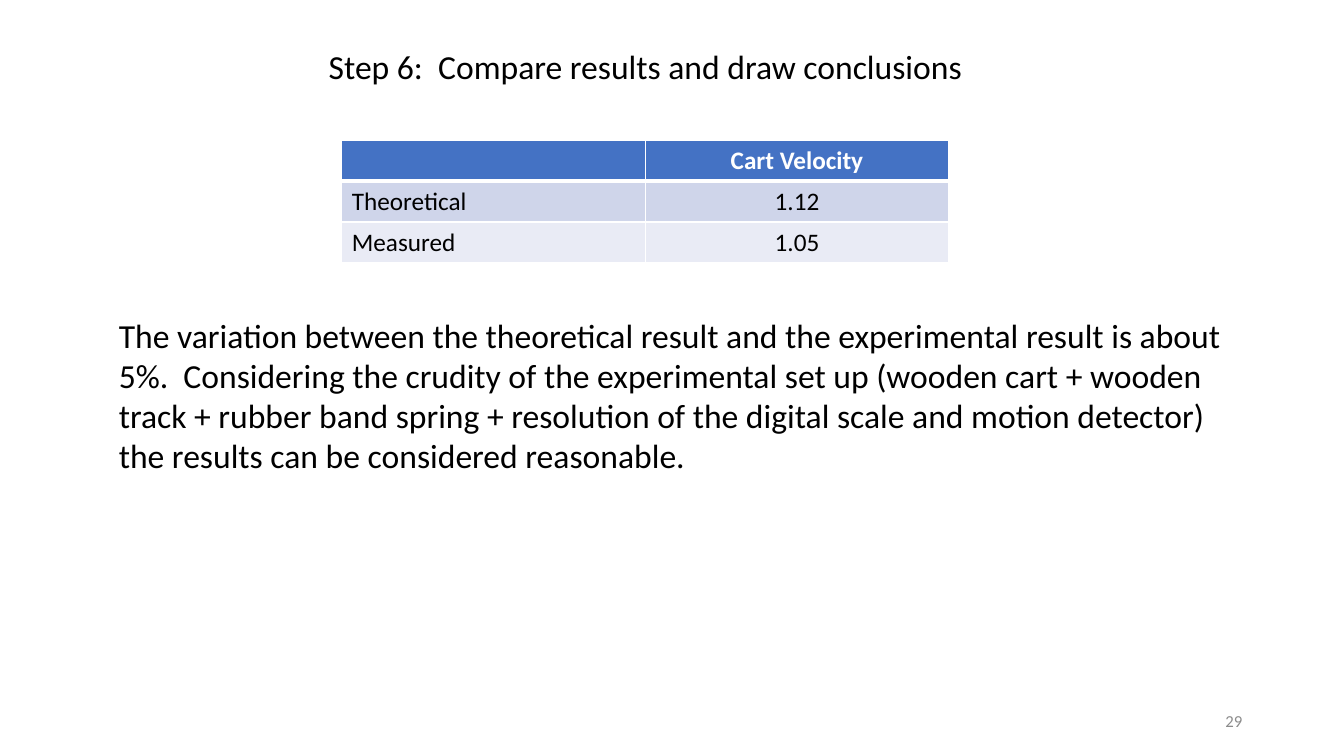
from lxml import etree
from pptx import Presentation
from pptx.dml.color import RGBColor
from pptx.enum import text
from pptx.oxml import ns
from pptx.util import Inches, Pt

BLACK = RGBColor(0x00, 0x00, 0x00)
WHITE = RGBColor(0xFF, 0xFF, 0xFF)
GRAY = RGBColor(0x8C, 0x8C, 0x8C)
HEADER_BLUE = RGBColor(0x44, 0x72, 0xC4)
BAND_DARK = RGBColor(0xCF, 0xD5, 0xEA)
BAND_LIGHT = RGBColor(0xE9, 0xEB, 0xF5)


def write_text(frame, words, size=24, color=BLACK, bold=False,
               align=text.PP_ALIGN.LEFT, anchor=text.MSO_ANCHOR.TOP):
    frame.word_wrap = True
    frame.vertical_anchor = anchor
    paragraph = frame.paragraphs[0]
    paragraph.alignment = align
    run = paragraph.add_run()
    run.text = words
    run.font.name = "Calibri"
    run.font.size = Pt(size)
    run.font.bold = bold
    run.font.color.rgb = color


def add_border(cell, side, width):
    line = etree.SubElement(cell._tc.get_or_add_tcPr(), ns.qn(f"a:ln{side}"), w=str(Pt(width)))
    fill = etree.SubElement(line, ns.qn("a:solidFill"))
    etree.SubElement(fill, ns.qn("a:srgbClr"), val=str(WHITE))


presentation = Presentation()
presentation.slide_width = Inches(13.33)
presentation.slide_height = Inches(7.5)
slide = presentation.slides.add_slide(presentation.slide_layouts[5])

title = slide.shapes.title
title.left, title.top = Inches(3.16), Inches(0.41)
title.width, title.height = Inches(6.77), Inches(0.5)
title.text_frame.auto_size = text.MSO_AUTO_SIZE.NONE
write_text(title.text_frame, "Step 6:  Compare results and draw conclusions")

rows = [
    ("", "Cart Velocity", HEADER_BLUE),
    ("Theoretical", "1.12", BAND_DARK),
    ("Measured", "1.05", BAND_LIGHT),
]
table = slide.shapes.add_table(
    len(rows), 2, Inches(3.39), Inches(1.39), Inches(6.02), Inches(1.22)).table
for row_index, (label, velocity, fill_color) in enumerate(rows):
    is_header = row_index == 0
    for column_index, words in enumerate((label, velocity)):
        cell = table.cell(row_index, column_index)
        for side in "LRTB":
            thick = (is_header and side == "B") or (row_index == 1 and side == "T")
            add_border(cell, side, 3 if thick else 1)
        cell.fill.solid()
        cell.fill.fore_color.rgb = fill_color
        if words:
            write_text(cell.text_frame, words, size=18, bold=is_header,
                       color=WHITE if is_header else BLACK,
                       align=text.PP_ALIGN.CENTER if column_index else text.PP_ALIGN.LEFT)

conclusion = slide.shapes.add_textbox(Inches(1.08), Inches(3.07), Inches(11.22), Inches(1.72))
write_text(
    conclusion.text_frame,
    "The variation between the theoretical result and the experimental result is about 5%.  "
    "Considering the crudity of the experimental set up (wooden cart + wooden track + rubber "
    "band spring + resolution of the digital scale and motion detector) the results can be "
    "considered reasonable.")

slide_number = slide.shapes.add_textbox(Inches(9.42), Inches(6.95), Inches(3), Inches(0.4))
write_text(slide_number.text_frame, "29", size=12, color=GRAY,
           align=text.PP_ALIGN.RIGHT, anchor=text.MSO_ANCHOR.MIDDLE)

presentation.save("out.pptx")
